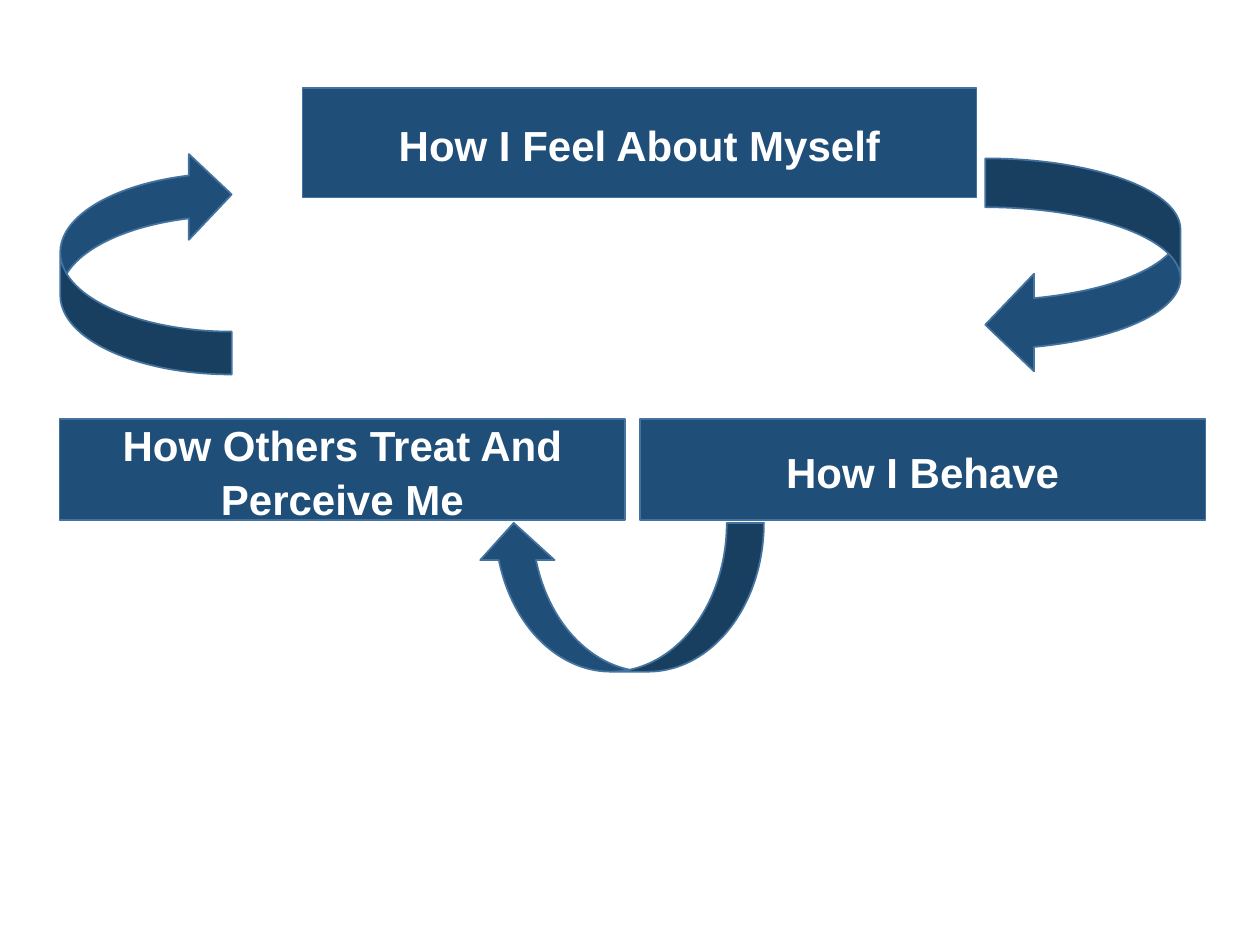
import pptx
import pptx.util
import pptx.dml.color
import pptx.enum.shapes
import pptx.enum.text

Pt = pptx.util.Pt
RGBColor = pptx.dml.color.RGBColor
ShapeType = pptx.enum.shapes.MSO_SHAPE

THEME = {
    "fill": RGBColor.from_string("1F4E79"),
    "line": RGBColor.from_string("43739E"),
    "text": RGBColor.from_string("FFFFFF"),
    "font": "Arial",
    "label_size": Pt(24),
    "line_width": Pt(1),
}
LABEL_FORMAT = {"name": THEME["font"], "size": THEME["label_size"], "bold": True}

presentation = pptx.Presentation()
presentation.slide_width = Pt(720)
presentation.slide_height = Pt(540)
slide = presentation.slides.add_slide(presentation.slide_layouts[6])


def add_filled_shape(shape_type, left, top, width, height):
    shape = slide.shapes.add_shape(shape_type, Pt(left), Pt(top), Pt(width), Pt(height))
    shape.shadow.inherit = False
    shape.fill.solid()
    shape.fill.fore_color.rgb = THEME["fill"]
    shape.line.color.rgb = THEME["line"]
    shape.line.width = THEME["line_width"]
    return shape


# Stages of the cycle: label, left, top, width, height
stages = [
    ("How I Feel About Myself", 172.8, 50.4, 385.2, 62.6),
    ("How Others Treat And Perceive Me", 34, 239.5, 323.3, 57.6),
    ("How I Behave", 365.6, 239.5, 323.3, 57.6),
]
for label, *box in stages:
    shape = add_filled_shape(ShapeType.RECTANGLE, *box)
    frame = shape.text_frame
    frame.word_wrap = True
    frame.vertical_anchor = pptx.enum.text.MSO_ANCHOR.MIDDLE
    paragraph = frame.paragraphs[0]
    paragraph.alignment = pptx.enum.text.PP_ALIGN.CENTER
    paragraph.line_spacing = 1.07
    run = paragraph.add_run()
    run.text = label
    for attribute, value in LABEL_FORMAT.items():
        setattr(run.font, attribute, value)
    run.font.color.rgb = THEME["text"]

# Arrows between the stages: rotation, left, top, width, height
arrows = [
    (180, 34.4, 86.6, 98, 127.4),
    (0, 563, 90.5, 111.6, 123),
    (90, 311.9, 259.2, 85, 164.2),
]
for rotation, *box in arrows:
    add_filled_shape(ShapeType.CURVED_LEFT_ARROW, *box).rotation = rotation

presentation.save("out.pptx")
